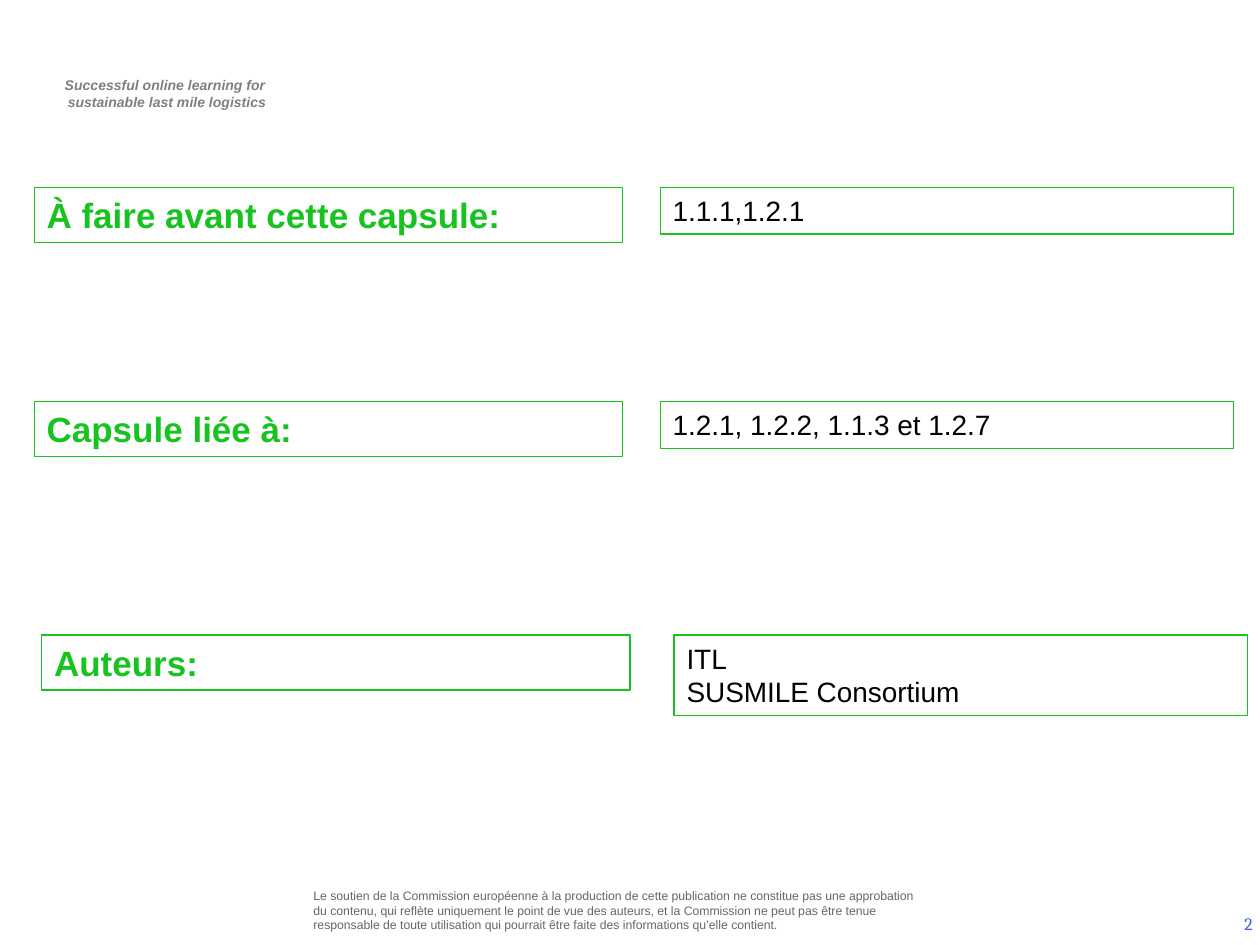
"""Build the slide that lists a capsule's prerequisites, links and authors."""
from pptx import Presentation
from pptx import util as u
from pptx.dml.color import RGBColor
from pptx.enum import shapes, text

GREEN = RGBColor(0x18, 0xC3, 0x20)
BLACK = RGBColor(0, 0, 0)
WHITE = RGBColor(0xFF, 0xFF, 0xFF)
GREY = RGBColor(0x7F, 0x7F, 0x7F)
DARK_GREY = RGBColor(0x66, 0x66, 0x66)
BLUE = RGBColor(0x33, 0x66, 0xCC)

LABEL_WIDTH, LABEL_HEIGHT = 11.86, 1.11
VALUE_WIDTH = 11.56

ROWS = [
    (0.69, 13.31, 3.78, "À faire avant cette capsule:", "1.1.1,1.2.1", 0.94),
    (0.69, 13.31, 8.1, "Capsule liée à:", "1.2.1, 1.2.2, 1.1.3 et 1.2.7", 0.94),
    (0.84, 13.59, 12.8, "Auteurs:", "ITL\nSUSMILE Consortium", 1.63),
]
TAGLINE = "Successful online learning for \nsustainable last mile logistics"
DISCLAIMER = (
    "Le soutien de la Commission européenne à la production de cette publication "
    "ne constitue pas une approbation du contenu, qui reflète uniquement le point "
    "de vue des auteurs, et la Commission ne peut pas être tenue responsable de "
    "toute utilisation qui pourrait être faite des informations qu’elle contient."
)


def write(box, words, size, color, bold=False, italic=False, name="Arial",
          align=text.PP_ALIGN.LEFT, anchor=text.MSO_ANCHOR.TOP):
    """Fill a box with wrapped text in one style."""
    frame = box.text_frame
    frame.word_wrap = True
    frame.vertical_anchor = anchor
    frame.text = words
    for para in frame.paragraphs:
        para.alignment = align
        for span in para.runs:
            font = span.font
            font.name, font.size = name, u.Pt(size)
            font.bold, font.italic = bold, italic
            font.color.rgb = color


def add_note(page, left, top, width, height, words, size, color, **style):
    """Add a plain text box."""
    box = page.shapes.add_textbox(u.Cm(left), u.Cm(top), u.Cm(width), u.Cm(height))
    write(box, words, size, color, **style)
    return box


def add_frame(page, left, top, width, height, words, size, color, **style):
    """Add a white rectangle with a green outline around its text."""
    box = page.shapes.add_shape(shapes.MSO_SHAPE.RECTANGLE, u.Cm(left), u.Cm(top),
                                u.Cm(width), u.Cm(height))
    box.shadow.inherit = False
    box.fill.solid()
    box.fill.fore_color.rgb = WHITE
    box.line.color.rgb = GREEN
    box.line.width = u.Pt(0.75)
    write(box, words, size, color, **style)
    box.text_frame.auto_size = text.MSO_AUTO_SIZE.SHAPE_TO_FIT_TEXT


def add_tagline(page):
    """Add the centred project tagline with its small left indent."""
    box = add_note(page, 0.74, 1.42, 5.16, 0.94, TAGLINE, 8, GREY, bold=True,
                   italic=True, align=text.PP_ALIGN.CENTER)
    for para in box.text_frame.paragraphs:
        para._p.get_or_add_pPr().set("marL", str(u.Cm(0.1)))


def main():
    """Build and save the deck."""
    deck = Presentation()
    deck.slide_width, deck.slide_height = u.Cm(25.4), u.Cm(19.05)
    page = deck.slides.add_slide(deck.slide_layouts[6])
    add_tagline(page)
    add_note(page, 6.07, 17.78, 12.78, 1.14, DISCLAIMER, 7, DARK_GREY)
    add_note(page, 19.58, 18.11, 5.92, 1.02, "2", 10, BLUE, name="Cambria",
             align=text.PP_ALIGN.RIGHT, anchor=text.MSO_ANCHOR.MIDDLE)
    for label_left, value_left, top, label, value, value_height in ROWS:
        add_frame(page, label_left, top, LABEL_WIDTH, LABEL_HEIGHT, label, 20, GREEN,
                  bold=True)
        add_frame(page, value_left, top, VALUE_WIDTH, value_height, value, 16, BLACK)
    deck.save("out.pptx")


if __name__ == "__main__":
    main()
